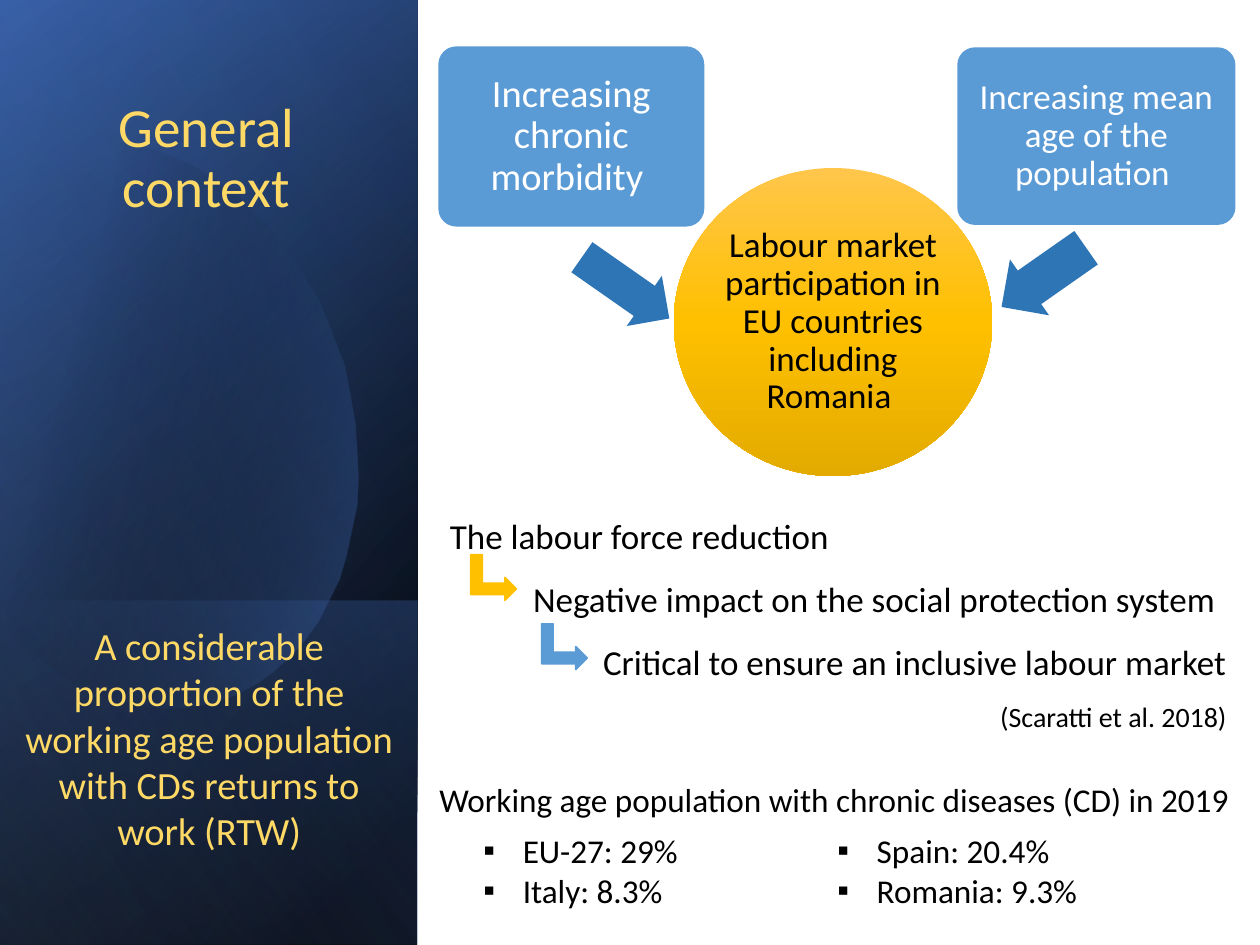
from lxml.etree import SubElement
from pptx import Presentation
from pptx.dml.color import RGBColor
from pptx.enum.shapes import MSO_SHAPE as Shape
from pptx.enum.text import MSO_ANCHOR as Anchor, MSO_AUTO_SIZE as AutoSize, PP_ALIGN as Align
from pptx.oxml.ns import qn
from pptx.util import Pt

COLORS = {
    "black": "000000", "white": "FFFFFF", "navy": "2F5597", "blue": "4472C4",
    "pale_blue": "8FAADC", "sky": "5B9BD5", "arrow": "2E75B6", "cream": "FFD966",
    "light_gold": "FFC64B", "gold": "FFC000", "dark_gold": "E3AB00",
}
FONT = "Calibri"
PANEL = (0, 0, 238.5, 540)
PANEL_FOOT = (0, 343, 238.5, 197)

# Stops are (position %, colour, opacity %).
PANEL_LAYERS = [
    (PANEL, 220, [(8, "black", 100), (100, "navy", 100)]),
    (PANEL, 240, [(0, "black", 0), (99, "blue", 46)]),
    (PANEL_FOOT, 140, [(2, "blue", 29), (100, "black", 30)]),
]
PANEL_SHEEN = (PANEL, 150, [(0, "black", 0), (99, "pale_blue", 11)])

# Each segment is two control points and an end point, in inches.
LEAF_START = (0.96, 1.14)
LEAF_CURVES = [
    ((1.71, 1.22), (2.44, 1.92), (2.73, 2.9)),
    ((3.07, 4.12), (2.62, 5.31), (1.71, 5.57)),
    ((1.14, 5.74), (0.53, 5.5), (0.07, 5)),
    ((-0.03, 4.88), (-0.25, 1.66), (-0.25, 1.66)),
    ((-0.15, 1.54), (0.02, 1.37), (0.45, 1.18)),
    ((0.62, 1.13), (0.79, 1.12), LEAF_START),
]


def color(name):
    return RGBColor.from_string(COLORS[name])


def place(box, at):
    box.left, box.top, box.width, box.height = map(Pt, at)


def fill_solid(shape, name):
    shape.fill.solid()
    shape.fill.fore_color.rgb = color(name)


def fill_gradient(shape, angle, stops):
    """Apply a linear gradient; the angle runs clockwise from left-to-right."""
    shape.fill.gradient()
    shape.fill.gradient_angle = 360 - angle
    stop_list = shape._element.spPr.find(qn("a:gradFill")).find(qn("a:gsLst"))
    for old in list(stop_list):
        stop_list.remove(old)
    for position, name, opacity in stops:
        stop = SubElement(stop_list, qn("a:gs"), pos=str(position * 1000))
        tint = SubElement(stop, qn("a:srgbClr"), val=COLORS[name])
        if opacity < 100:
            SubElement(tint, qn("a:alpha"), val=str(opacity * 1000))


def add_shape(page, kind, at, fill=None, rotation=0, adjustments=()):
    shape = page.shapes.add_shape(kind, *map(Pt, at))
    shape.shadow.inherit = False
    shape.line.fill.background()
    shape.rotation = rotation
    for index, value in enumerate(adjustments):
        shape.adjustments[index] = value
    if fill:
        fill_solid(shape, fill)
    return shape


def add_layer(page, at, angle, stops):
    fill_gradient(add_shape(page, Shape.RECTANGLE, at), angle, stops)


def curve_points(start, curves, steps=16):
    """Yield points, in points, along a chain of cubic curves."""
    for first, second, end in curves:
        for step in range(1, steps + 1):
            t = step / steps
            weights = ((1 - t) ** 3, 3 * t * (1 - t) ** 2, 3 * t * t * (1 - t), t ** 3)
            corners = (start, first, second, end)
            yield tuple(72 * sum(w * c[axis] for w, c in zip(weights, corners))
                        for axis in (0, 1))
        start = end


def add_leaf(page):
    x, y = LEAF_START
    builder = page.shapes.build_freeform(72 * x, 72 * y, scale=Pt(1))
    builder.add_line_segments(curve_points(LEAF_START, LEAF_CURVES))
    leaf = builder.convert_to_shape()
    leaf.shadow.inherit = False
    leaf.line.fill.background()
    fill_gradient(leaf, 14, [(29, "black", 0), (100, "blue", 43)])


def set_frame(box, anchor=Anchor.TOP, insets=(7.2, 3.6)):
    frame = box.text_frame
    frame.word_wrap = True
    frame.auto_size = AutoSize.NONE
    frame.vertical_anchor = anchor
    frame.margin_left = frame.margin_right = Pt(insets[0])
    frame.margin_top = frame.margin_bottom = Pt(insets[1])


def write(box, text, size, ink="black", align=Align.LEFT, spacing=1.0,
          indent=0, bullet=None):
    """Put text in the first paragraph if it is empty, else in a new one."""
    frame = box.text_frame
    para = frame.paragraphs[0] if not frame.text else frame.add_paragraph()
    para.alignment = align
    para.line_spacing = spacing
    para.space_before = para.space_after = Pt(0)
    span = para.add_run()
    span.text = text
    span.font.name, span.font.size = FONT, Pt(size)
    span.font.color.rgb = color(ink)
    properties = para._p.get_or_add_pPr()
    properties.set("marL", str(Pt(indent)))
    properties.set("indent", str(Pt(-indent if bullet else 0)))
    if bullet:
        SubElement(properties, qn("a:buChar"), char=bullet)


def add_text_box(page, at):
    box = page.shapes.add_textbox(*map(Pt, at))
    set_frame(box)
    return box


def add_side_panel(page):
    for layer in PANEL_LAYERS:
        add_layer(page, *layer)
    add_leaf(page)
    add_layer(page, *PANEL_SHEEN)
    title = page.shapes.title
    page.shapes._spTree.append(title._element)
    place(title, (19, 51, 198, 78))
    set_frame(title, Anchor.BOTTOM, (32, 3.6))
    write(title, "General context", 31.5, "cream", Align.CENTER, 0.9)
    summary = add_text_box(page, (6, 352, 227, 172))
    write(summary, "A considerable proportion of the working age population "
          "with CDs returns to work (RTW)", 22, "cream", Align.CENTER)


def add_causes(page):
    market = add_shape(page, Shape.OVAL, (385, 96, 182, 176))
    fill_gradient(market, 90, [(0, "light_gold", 100), (50, "gold", 100),
                               (100, "dark_gold", 100)])
    set_frame(market, Anchor.MIDDLE, (1, 1))
    write(market, "Labour market participation in EU countries including Romania ",
          20, align=Align.CENTER, spacing=0.9)
    causes = [
        ("Increasing chronic morbidity ", 22, (250.5, 26.5, 152, 103),
         (327, 147, 61, 35), 215),
        ("Increasing mean age of the population ", 20, (547, 27, 159, 101.5),
         (567, 139, 59, 39), 325),
    ]
    for text, size, card_at, arrow_at, rotation in causes:
        add_shape(page, Shape.LEFT_ARROW, arrow_at, "arrow", rotation, (0.6, 0.5))
        card = add_shape(page, Shape.ROUNDED_RECTANGLE, card_at, "sky", adjustments=(0.1,))
        set_frame(card, Anchor.MIDDLE, (3, 3))
        write(card, text, size, "white", Align.CENTER, 0.9)


def add_consequences(page):
    chain = add_text_box(page, (250, 278.5, 458, 142))
    write(chain, "The labour force reduction", 20, spacing=1.5)
    write(chain, "Negative impact on the social protection system", 20,
          spacing=1.5, indent=47.5)
    write(chain, "Critical to ensure an inclusive labour market", 20,
          align=Align.RIGHT, spacing=1.5)
    write(chain, "(Scaratti et al. 2018)", 16, align=Align.RIGHT, spacing=1.5)
    for left, top, fill in ((269, 317, "gold"), (309.5, 356.5, "sky")):
        bend = add_shape(page, Shape.BENT_UP_ARROW, (left, top, 26, 26), fill, 90)
        bend.line.color.rgb = color(fill)
        bend.line.width = Pt(1)


def add_statistics(page):
    heading = add_text_box(page, (244, 441.5, 477, 30))
    write(heading, "Working age population with chronic diseases (CD) in 2019", 19)
    rates = page.placeholders[1]
    page.shapes._spTree.append(rates._element)
    place(rates, (269, 471, 419, 55))
    set_frame(rates)
    rates.text_frame._txBody.bodyPr.set("numCol", "2")
    for text in ("EU-27: 29%", "Italy: 8.3%", "Spain: 20.4%", "Romania: 9.3%"):
        write(rates, text, 19, indent=22.5, bullet="▪")


def main():
    deck = Presentation()
    deck.slide_width, deck.slide_height = Pt(720), Pt(540)
    page = deck.slides.add_slide(deck.slide_layouts[1])
    add_side_panel(page)
    add_causes(page)
    add_consequences(page)
    add_statistics(page)
    deck.save("out.pptx")


if __name__ == "__main__":
    main()
